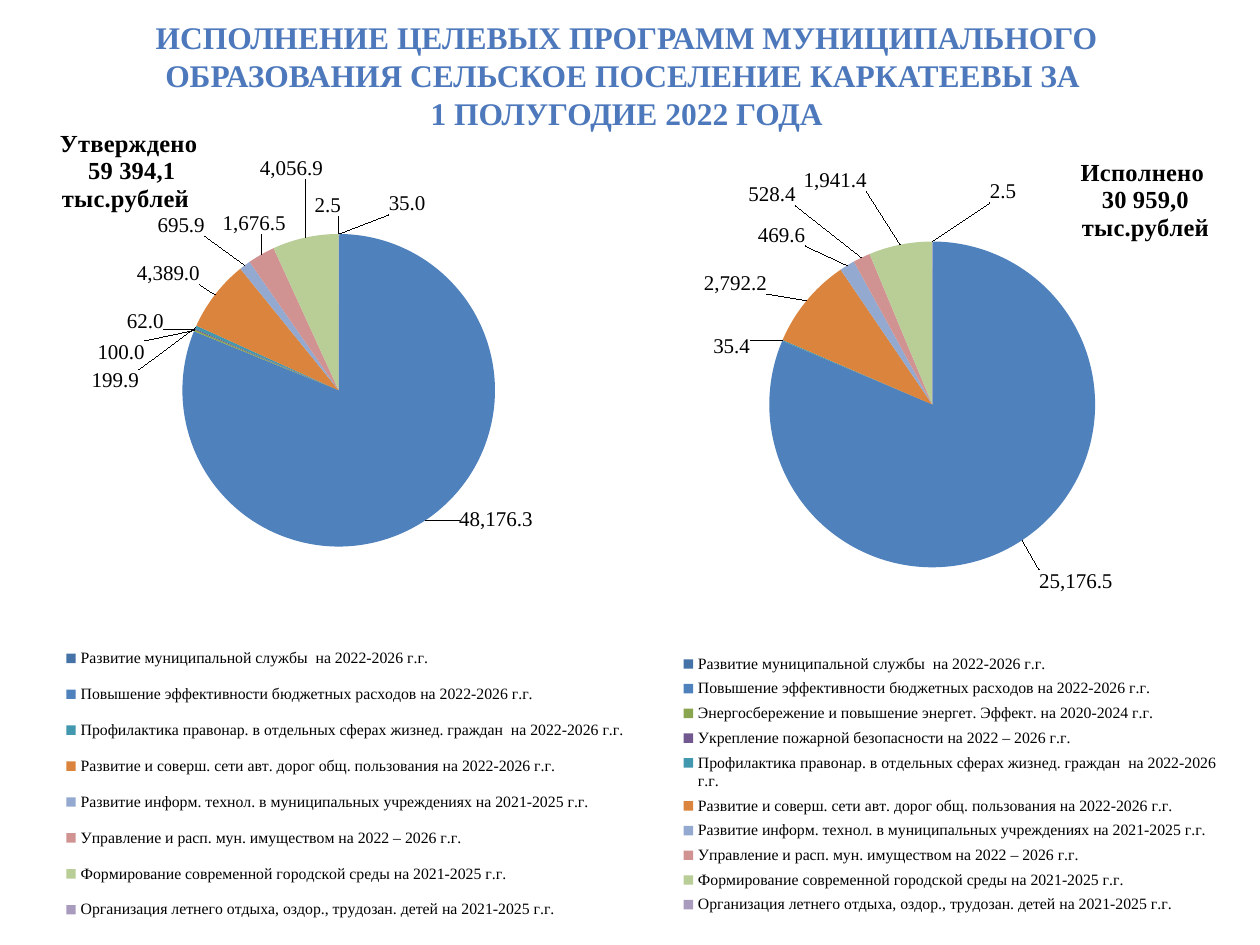
from dataclasses import dataclass
from math import cos, pi, sin

from lxml import etree
from pptx import Presentation
from pptx.chart.data import CategoryChartData
from pptx.dml.color import RGBColor
from pptx.enum.chart import XL_CHART_TYPE, XL_LABEL_POSITION, XL_LEGEND_POSITION
from pptx.enum.text import MSO_ANCHOR, PP_ALIGN
from pptx.oxml.ns import qn
from pptx.util import Cm, Pt

PIE = XL_CHART_TYPE.PIE
BOTTOM = XL_LEGEND_POSITION.BOTTOM
BEST = XL_LABEL_POSITION.BEST_FIT
OUTER = XL_LABEL_POSITION.OUTSIDE_END
CENTER = PP_ALIGN.CENTER
MIDDLE = MSO_ANCHOR.MIDDLE

FACE = "Times New Roman"
FORMAT = "#,##0.0"
FILLS = ["4572A7", "4F81BD", "89A54E", "71588F", "4198AF",
         "DB843D", "93A9CF", "D19392", "B9CD96", "A99BBD"]
NAMES = [
    "Развитие муниципальной службы  на 2022-2026 г.г.",
    "Повышение эффективности бюджетных расходов на 2022-2026 г.г.",
    "Энергосбережение и повышение энергет. Эффект. на 2020-2024 г.г.",
    "Укрепление пожарной безопасности на 2022 – 2026 г.г.",
    "Профилактика правонар. в отдельных сферах жизнед. граждан  на 2022-2026 г.г.",
    "Развитие и соверш. сети авт. дорог общ. пользования на 2022-2026 г.г.",
    "Развитие информ. технол. в муниципальных учреждениях на 2021-2025 г.г.",
    "Управление и расп. мун. имуществом на 2022 – 2026 г.г.",
    "Формирование современной городской среды на 2021-2025 г.г.",
    "Организация летнего отдыха, оздор., трудозан. детей на 2021-2025 г.г.",
]


@dataclass
class Pie:
    title: str
    box: tuple      # left, top, width, height in cm
    head: tuple     # title corner, share of the chart
    plot: tuple     # plot area, share of the chart
    legend: tuple   # legend area, share of the chart
    values: list
    labels: dict    # label centres on the slide in cm
    pos: XL_LABEL_POSITION
    hidden: tuple = ()  # legend entries left out


PIES = [
    Pie("Утверждено \n59 394,1\nтыс.рублей  ", (0.89, 1.98, 12.12, 17.07),
        (0.02, 0.03), (0.23, 0.16, 0.52, 0.37), (0.02, 0.63, 0.96, 0.36),
        [35, 48176.3, 100, 62, 199.9, 4389, 695.9, 1676.5, 4056.9, 2.5],
        {0: (8.21, 4.09), 1: (10.06, 10.48), 2: (2.42, 7.08), 3: (2.9, 6.47),
         4: (2.3, 7.66), 5: (3.33, 5.5), 6: (3.63, 4.52), 7: (5.06, 4.48),
         8: (5.81, 3.37), 9: (6.61, 4.13)}, BEST, (2, 3)),
    Pie("Исполнено\n 30 959,0\n тыс.рублей", (13.28, 2.59, 11.73, 16.13),
        (0.71, 0.03), (0.19, 0.14, 0.56, 0.41), (0.03, 0.65, 0.94, 0.34),
        [10, 25176.5, 0, 3, 35.4, 2792.2, 469.6, 528.4, 1941.4, 2.5],
        {1: (21.75, 11.73), 4: (14.72, 6.96), 5: (14.76, 5.69),
         6: (15.73, 4.72), 7: (15.54, 3.91), 8: (16.77, 3.63),
         9: (20.22, 3.85)}, OUTER),
]


def color(code: str) -> RGBColor:
    return RGBColor.from_string(code)


def style(font, size: float, bold: bool = False, ink: str = "000000") -> None:
    font.name, font.size, font.bold = FACE, Pt(size), bold
    font.color.rgb = color(ink)


def write(frame, text: str, **form) -> None:
    frame.text = text
    for para in frame.paragraphs:
        para.alignment = CENTER
        for run in para.runs:
            style(run.font, **form)


def node(tag: str, **attrs):
    item = etree.Element(qn("c:" + tag))
    for key, val in attrs.items():
        item.set(key, str(val))
    return item


def place(owner, spot: tuple, after: str = "", edge: bool = True,
          inner: bool = False) -> None:
    """Give a chart part a manual layout, in shares of the chart."""
    for old in owner.findall(qn("c:layout")):
        owner.remove(old)
    layout, manual = node("layout"), node("manualLayout")
    layout.append(manual)
    if inner:
        manual.append(node("layoutTarget", val="inner"))
    if edge:
        manual.extend([node("xMode", val="edge"), node("yMode", val="edge")])
    manual.extend([node(tag, val=round(val, 4)) for tag, val in zip("xywh", spot)])
    if after:
        owner.findall(qn("c:" + after))[-1].addnext(layout)
    else:
        owner.insert(0, layout)


def shift(pie: Pie, idx: int) -> tuple:
    """Offset of a label from its usual place outside its slice."""
    left, top, wide, high = pie.box
    px, py, pw, ph = pie.plot
    reach = min(pw * wide, ph * high) / 2 + 0.15
    turn = 2 * pi * (sum(pie.values[:idx]) + pie.values[idx] / 2) / sum(pie.values)
    dx, dy = sin(turn), -cos(turn)
    half_w = len(f"{pie.values[idx]:,.1f}") * 0.1
    # Labels near an axis are centred on it, others touch by a corner
    side_x = 0 if abs(dx) < 0.087 else (1 if dx > 0 else -1)
    side_y = 0 if abs(dy) < 0.087 else (1 if dy > 0 else -1)
    base_x = left + (px + pw / 2) * wide + reach * dx + side_x * half_w
    base_y = top + (py + ph / 2) * high + reach * dy + side_y * 0.24
    x, y = pie.labels[idx]
    return (x - base_x) / wide, (y - base_y) / high


def draw(slide, pie: Pie) -> None:
    data = CategoryChartData(number_format=FORMAT)
    data.categories = NAMES
    data.add_series("Series 1", pie.values)
    chart = slide.shapes.add_chart(PIE, *map(Cm, pie.box), data).chart
    style(chart.font, 18)
    root = chart.element
    place(root.xpath(".//c:plotArea")[0], pie.plot, inner=True)

    # Title
    chart.has_title = True
    write(chart.chart_title.text_frame, pie.title, size=14, bold=True)
    chart.chart_title.include_in_layout = False
    place(root.xpath("./c:chart/c:title")[0], pie.head, "tx")

    # Legend
    chart.has_legend = True
    legend = chart.legend
    legend.position, legend.include_in_layout = BOTTOM, False
    style(legend.font, 9)
    area = root.xpath(".//c:legend")[0]
    place(area, pie.legend, "legendPos")
    for idx in pie.hidden:
        entry = node("legendEntry")
        entry.extend([node("idx", val=idx), node("delete", val=1)])
        area.find(qn("c:layout")).addprevious(entry)

    # Slices and their labels
    chart.plots[0].vary_by_categories = True
    series = chart.plots[0].series[0]
    labels = series.data_labels
    labels.show_value, labels.position = True, pie.pos
    labels.number_format, labels.number_format_is_linked = FORMAT, False
    style(labels.font, 12)
    for idx, fill in enumerate(FILLS):
        point = series.points[idx]
        point.format.fill.solid()
        point.format.fill.fore_color.rgb = color(fill)
        point.format.line.fill.background()
        label = point.data_label
        label.position = pie.pos
        style(label.font, 12)
        mark = root.xpath(f".//c:dLbl[c:idx/@val='{idx}']")[0]
        if idx in pie.labels:
            place(mark, shift(pie, idx), "idx", edge=False)
        else:
            for part in list(mark)[1:]:
                mark.remove(part)
            mark.append(node("delete", val=1))


def main() -> None:
    deck = Presentation()
    deck.slide_width, deck.slide_height = Cm(25.4), Cm(19.05)
    slide = deck.slides.add_slide(deck.slide_layouts[5])

    # Heading
    title = slide.shapes.title
    title.left, title.top, title.width, title.height = map(
        Cm, (1.27, 0.76, 22.73, 2.01))
    frame = title.text_frame
    write(frame, "ИСПОЛНЕНИЕ ЦЕЛЕВЫХ ПРОГРАММ МУНИЦИПАЛЬНОГО ОБРАЗОВАНИЯ "
          "СЕЛЬСКОЕ ПОСЕЛЕНИЕ КАРКАТЕЕВЫ ЗА \v1 ПОЛУГОДИЕ 2022 ГОДА",
          size=18, bold=True, ink="4D79BC")
    frame.word_wrap, frame.vertical_anchor = True, MIDDLE
    frame.margin_left = frame.margin_right = Cm(0.28)
    frame.margin_top, frame.margin_bottom = Cm(0.15), Cm(0.65)

    # Approved and spent amounts
    for pie in PIES:
        draw(slide, pie)
    deck.save("out.pptx")


if __name__ == "__main__":
    main()
